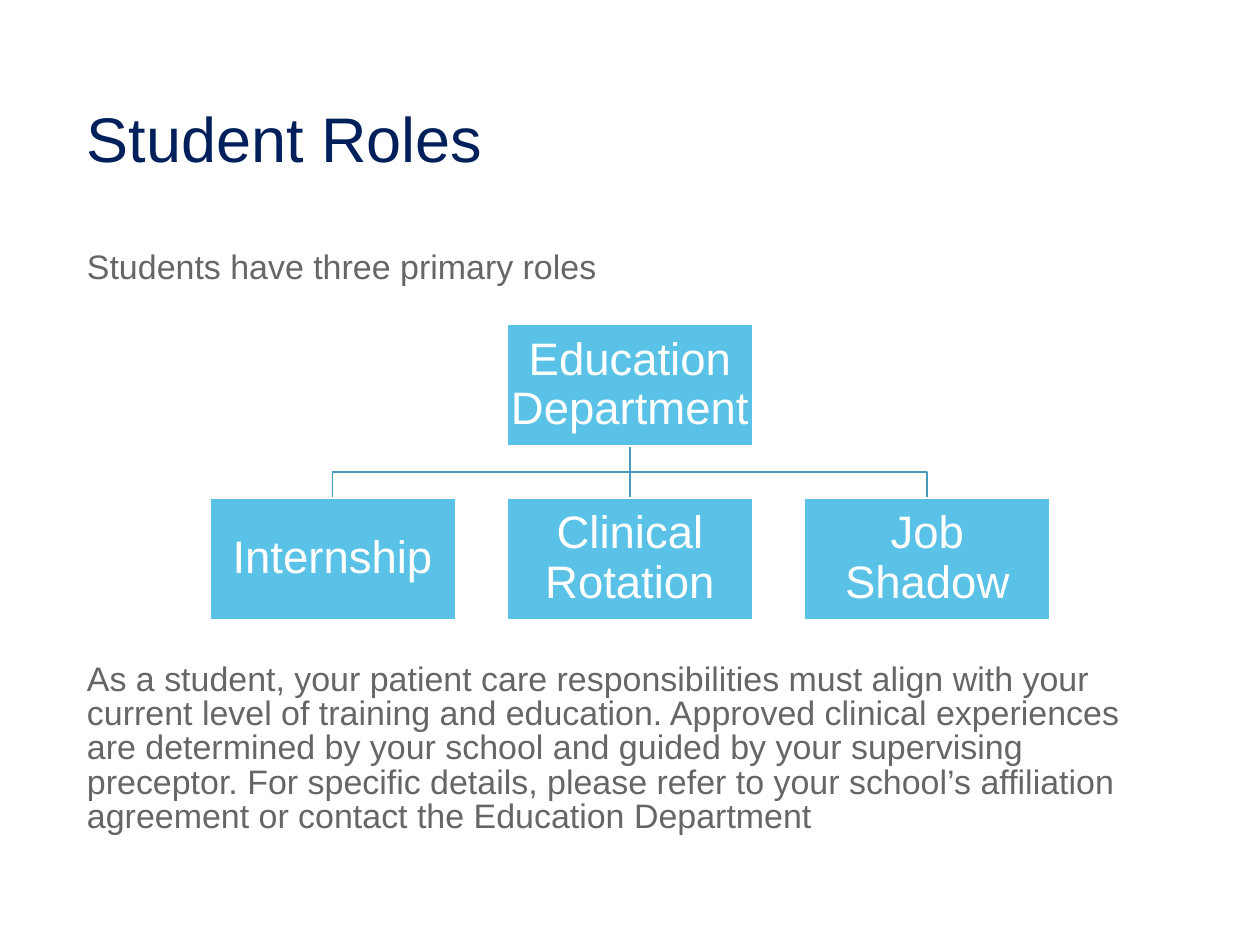
import pptx
import pptx.util
import pptx.dml.color
import pptx.enum.shapes
import pptx.enum.text
from dataclasses import dataclass
from pptx.util import Inches

TITLE = "Student Roles"
INTRO = "Students have three primary roles"
DETAILS = (
    "As a student, your patient care responsibilities must align with your "
    "current level of training and education. Approved clinical experiences "
    "are determined by your school and guided by your supervising preceptor. "
    "For specific details, please refer to your school’s affiliation "
    "agreement or contact the Education Department"
)
PARENT = "Education Department"
ROLES = ["Internship", "Clinical Rotation", "Job Shadow"]


@dataclass(frozen=True)
class Theme:
    font: str = "Arial"
    title: str = "00205B"
    body: str = "666666"
    box: str = "5BC2E7"
    line: str = "499BB9"
    white: str = "FFFFFF"
    title_size: float = 36
    body_size: float = 19.4
    box_size: float = 26


THEME = Theme()
LEFT, TEXT_W = 0.69, 8.62
CENTER_X, PITCH = 5, 2.36
BOX_W, BOX_H = 1.95, 0.97
PARENT_Y, ROLES_Y = 2.57, 3.95
PARENT_BOTTOM = PARENT_Y + BOX_H
BUS_Y = (PARENT_BOTTOM + ROLES_Y) / 2


def rgb(value):
    return pptx.dml.color.RGBColor.from_string(value)


def write(shape, text, size, color, spacing, inset=0, anchor="TOP", align="LEFT"):
    tf = shape.text_frame
    tf.word_wrap = True
    tf.vertical_anchor = pptx.enum.text.MSO_ANCHOR[anchor]
    tf.margin_left = tf.margin_right = Inches(inset)
    tf.margin_top = tf.margin_bottom = Inches(inset)
    p = tf.paragraphs[0]
    p.alignment = pptx.enum.text.PP_ALIGN[align]
    p.line_spacing = spacing
    r = p.add_run()
    r.text = text
    r.font.name = THEME.font
    r.font.size = pptx.util.Pt(size)
    r.font.color.rgb = rgb(color)


def add_title(s):
    sp = s.shapes.title
    sp.left, sp.top = Inches(LEFT), Inches(0.4)
    sp.width, sp.height = Inches(TEXT_W), Inches(1.45)
    write(sp, TITLE, THEME.title_size, THEME.title, 0.9, anchor="MIDDLE")


def add_body(s, text, top, height):
    sp = s.shapes.add_textbox(Inches(LEFT), Inches(top), Inches(TEXT_W), Inches(height))
    write(sp, text, THEME.body_size, THEME.body, 0.84)


def add_box(s, text, x, top):
    sp = s.shapes.add_shape(
        pptx.enum.shapes.MSO_SHAPE.RECTANGLE,
        Inches(x - BOX_W / 2), Inches(top), Inches(BOX_W), Inches(BOX_H),
    )
    sp.shadow.inherit = False
    sp.fill.solid()
    sp.fill.fore_color.rgb = rgb(THEME.box)
    sp.line.color.rgb = rgb(THEME.white)
    sp.line.width = pptx.util.Pt(1)
    write(sp, text, THEME.box_size, THEME.white, 0.9, 0.02, "MIDDLE", "CENTER")


def add_branch(s, x):
    """Draw the line from the parent box down to the role box centred on x."""
    points = [(CENTER_X, PARENT_BOTTOM), (CENTER_X, BUS_Y), (x, BUS_Y), (x, ROLES_Y)]
    if x == CENTER_X:
        sp = s.shapes.add_connector(
            pptx.enum.shapes.MSO_CONNECTOR.STRAIGHT,
            *(Inches(v) for v in points[0] + points[-1]),
        )
        pptx.oxml.ns  # namespace helper used by the next line
        sp._element.spPr.append(pptx.oxml.xmlchemy.OxmlElement("a:effectLst"))
    else:
        path_points = [(Inches(px), Inches(py)) for px, py in points]
        builder = s.shapes.build_freeform(*path_points[0])
        builder.add_line_segments(path_points[1:], close=False)
        sp = builder.convert_to_shape()
        sp.shadow.inherit = False
        sp.fill.background()
    sp.line.color.rgb = rgb(THEME.line)
    sp.line.width = pptx.util.Pt(1)


def main():
    prs = pptx.Presentation()
    prs.slide_width, prs.slide_height = Inches(10), Inches(7.5)
    s = prs.slides.add_slide(prs.slide_layouts.get_by_name("Title Only"))
    add_title(s)
    add_body(s, INTRO, 2, 0.35)
    add_body(s, DETAILS, 5.27, 1.4)

    centers = [CENTER_X + (i - len(ROLES) // 2) * PITCH for i in range(len(ROLES))]
    for x in centers:
        add_branch(s, x)
    add_box(s, PARENT, CENTER_X, PARENT_Y)
    for role, x in zip(ROLES, centers):
        add_box(s, role, x, ROLES_Y)
    prs.save("out.pptx")


if __name__ == "__main__":
    main()
